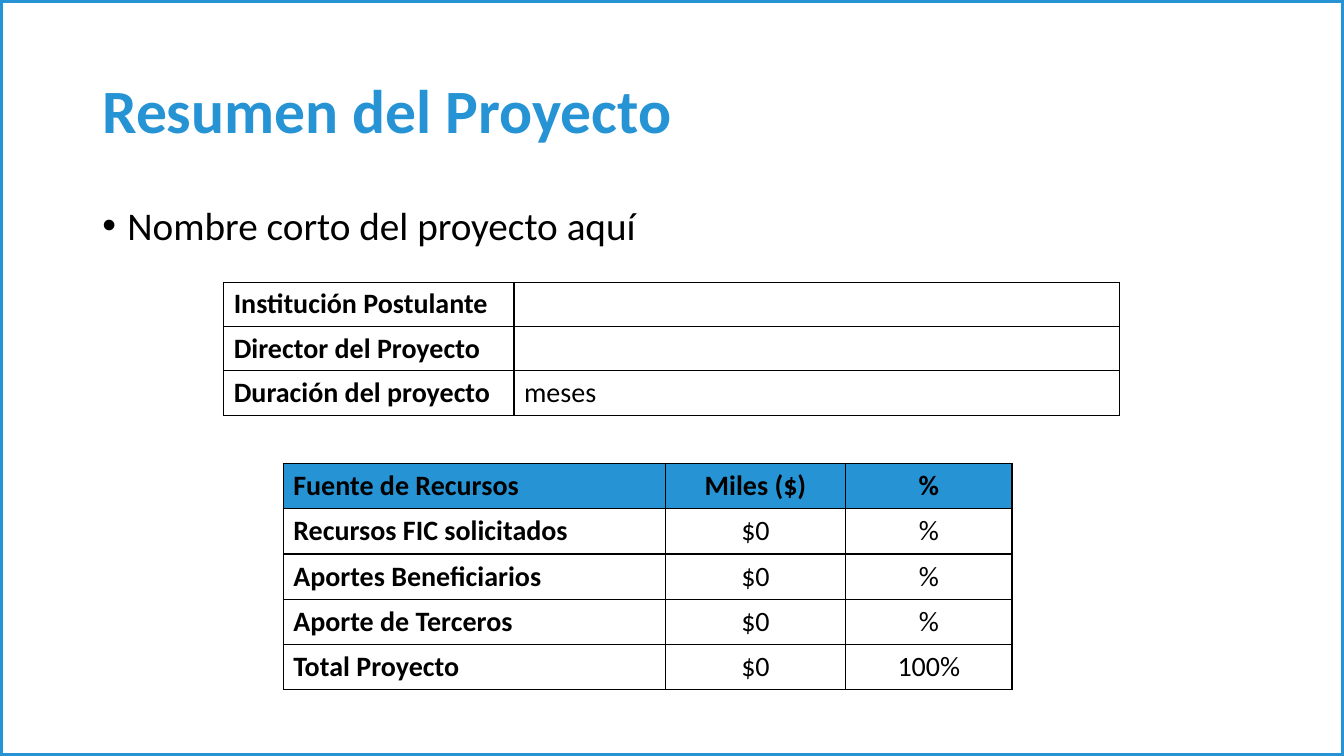
from lxml import etree
from pptx import Presentation
from pptx.dml.color import RGBColor
from pptx.enum.shapes import MSO_SHAPE
from pptx.enum.text import MSO_ANCHOR, PP_ALIGN
from pptx.oxml.ns import qn
from pptx.util import Pt

FRAME = MSO_SHAPE.FRAME
MIDDLE, TOP = MSO_ANCHOR.MIDDLE, MSO_ANCHOR.TOP
LEFT, CENTER = PP_ALIGN.LEFT, PP_ALIGN.CENTER

FONT = "Calibri"
BLUE, BLACK, WHITE = "2593D4", "000000", "FFFFFF"
WIDTH, HEIGHT = 960, 540
CELL_SIZE = 20

PROJECT_ROWS = [
    ["Institución Postulante", ""],
    ["Director del Proyecto", ""],
    ["Duración del proyecto", "meses"],
]
FUNDING_ROWS = [
    ["Fuente de Recursos", "Miles ($)", "%"],
    ["Recursos FIC solicitados", "$0", "%"],
    ["Aportes Beneficiarios", "$0", "%"],
    ["Aporte de Terceros", "$0", "%"],
    ["Total Proyecto", "$0", "100%"],
]


def color(hex_string):
    return RGBColor.from_string(hex_string)


def add_run(paragraph, text, size, hex_string, bold=False):
    run = paragraph.add_run()
    run.text = text
    run.font.name = FONT
    run.font.size = Pt(size)
    run.font.bold = bold
    run.font.color.rgb = color(hex_string)


def add_text_box(slide, box, anchor):
    """Add a wrapping text box and return its first paragraph."""
    frame = slide.shapes.add_textbox(*map(Pt, box)).text_frame
    frame.word_wrap = True
    frame.vertical_anchor = anchor
    paragraph = frame.paragraphs[0]
    paragraph.line_spacing = 0.9
    return paragraph


def add_title(slide, box):
    paragraph = add_text_box(slide, box, MIDDLE)
    add_run(paragraph, "Resumen del Proyecto", 44, BLUE, bold=True)


def add_body(slide, box):
    paragraph = add_text_box(slide, box, TOP)
    paragraph.space_before = Pt(10)
    add_run(paragraph, "Nombre corto del proyecto aquí", 28, BLACK)
    # Hanging bullet
    properties = paragraph._p.get_or_add_pPr()
    properties.set("marL", str(Pt(18)))
    properties.set("indent", str(Pt(-18)))
    etree.SubElement(properties, qn("a:buFont")).set("typeface", "Arial")
    etree.SubElement(properties, qn("a:buChar")).set("char", "•")


def add_border(slide, box):
    shape = slide.shapes.add_shape(FRAME, *map(Pt, box))
    shape.shadow.inherit = False
    shape.adjustments[0] = 0.003
    shape.fill.solid()
    shape.fill.fore_color.rgb = color(BLUE)
    shape.line.color.rgb = color(BLUE)
    shape.line.width = Pt(1)


def outline_cell(cell):
    """Draw a thin black line on all four sides, ahead of the cell's fill."""
    properties = cell._tc.get_or_add_tcPr()
    for position, side in enumerate(("lnL", "lnR", "lnT", "lnB")):
        line = etree.Element(qn(f"a:{side}"), w=str(Pt(1)))
        fill = etree.SubElement(line, qn("a:solidFill"))
        etree.SubElement(fill, qn("a:srgbClr")).set("val", BLACK)
        properties.insert(position, line)


def add_grid(slide, box, rows, column_widths, value_alignment, has_header=False):
    """Add a table whose first column, and header row if any, is bold."""
    shape = slide.shapes.add_table(len(rows), len(column_widths), *map(Pt, box))
    table = shape.table
    table.first_row = has_header
    table.horz_banding = False
    for column, width in zip(table.columns, column_widths):
        column.width = Pt(width)
    for row_index, texts in enumerate(rows):
        table.rows[row_index].height = Pt(box[3] / len(rows))
        is_header = has_header and row_index == 0
        for column_index, text in enumerate(texts):
            cell = table.cell(row_index, column_index)
            cell.vertical_anchor = MIDDLE
            cell.fill.solid()
            cell.fill.fore_color.rgb = color(BLUE if is_header else WHITE)
            outline_cell(cell)
            paragraph = cell.text_frame.paragraphs[0]
            paragraph.alignment = value_alignment if column_index else LEFT
            paragraph.font.size = Pt(CELL_SIZE)
            if text:
                bold = is_header or column_index == 0
                add_run(paragraph, text, CELL_SIZE, BLACK, bold)


def main():
    presentation = Presentation()
    presentation.slide_width = Pt(WIDTH)
    presentation.slide_height = Pt(HEIGHT)
    slide = presentation.slides.add_slide(presentation.slide_layouts[6])

    # Heading, project name and slide border
    add_title(slide, (66, 28.75, 828, 104.4))
    add_body(slide, (66, 143.75, 828, 342.6))
    add_border(slide, (0, 0, WIDTH, HEIGHT))

    # Project details and funding sources
    add_grid(slide, (159.8, 201.6, 640, 95), PROJECT_ROWS, (207.4, 432.6), LEFT)
    add_grid(slide, (202.3, 331.2, 520.6, 161.3), FUNDING_ROWS,
             (272.9, 128.9, 118.8), CENTER, has_header=True)

    presentation.save("out.pptx")


if __name__ == "__main__":
    main()
